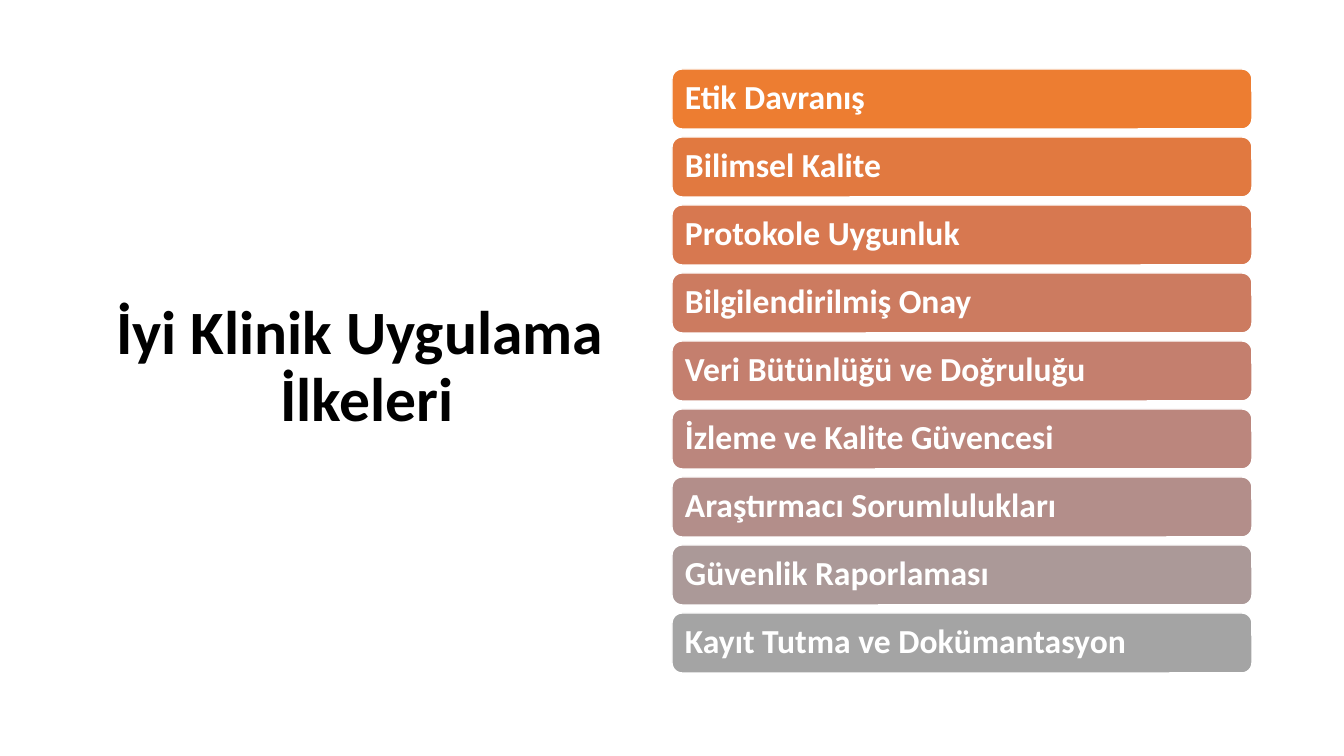
from pptx import Presentation
from pptx.dml.color import RGBColor
from pptx.enum.shapes import MSO_SHAPE
from pptx.enum.text import MSO_ANCHOR, PP_ALIGN
from pptx.util import Inches, Pt

PX_PER_INCH = 100.8
SLIDE_SIZE = (1344, 756)

TITLE = "İyi Klinik Uygulama\v İlkeleri"
PRINCIPLES = [
    ("Etik Davranış", "ED7D31"),
    ("Bilimsel Kalite", "E17940"),
    ("Protokole Uygunluk", "D77850"),
    ("Bilgilendirilmiş Onay", "CC7B60"),
    ("Veri Bütünlüğü ve Doğruluğu", "C47F6E"),
    ("İzleme ve Kalite Güvencesi", "BB867D"),
    ("Araştırmacı Sorumlulukları", "B38E8A"),
    ("Güvenlik Raporlaması", "AB9998"),
    ("Kayıt Tutma ve Dokümantasyon", "A4A4A4"),
]
BAR_LEFT, BAR_TOP, BAR_WIDTH, BAR_HEIGHT, BAR_PITCH = 672, 69, 580, 60, 68


def px(length):
    return Inches(length / PX_PER_INCH)


def color(value):
    return RGBColor.from_string(value)


class SlideBuilder:
    font_name = "Calibri"
    white = "FFFFFF"
    black = "000000"

    def __init__(self, slide):
        self.slide = slide

    def set_text(self, shape, text, size, text_color, align, margins):
        frame = shape.text_frame
        frame.text = text
        frame_format = {"word_wrap": True, "vertical_anchor": MSO_ANCHOR.MIDDLE}
        for side, margin in zip(("left", "top", "right", "bottom"), margins):
            frame_format[f"margin_{side}"] = px(margin)
        for name, value in frame_format.items():
            setattr(frame, name, value)
        paragraph = frame.paragraphs[0]
        for name, value in {"alignment": align, "line_spacing": 0.9}.items():
            setattr(paragraph, name, value)
        for run in paragraph.runs:
            font_format = {"name": self.font_name, "size": Pt(size), "bold": True}
            for name, value in font_format.items():
                setattr(run.font, name, value)
            run.font.color.rgb = color(text_color)

    def title(self, text, *box):
        shape = self.slide.shapes.add_textbox(*map(px, box))
        self.set_text(shape, text, 44, self.black, PP_ALIGN.CENTER, (10, 5, 10, 5))

    def bar(self, text, fill, *box):
        shape = self.slide.shapes.add_shape(MSO_SHAPE.ROUNDED_RECTANGLE, *map(px, box))
        shape.shadow.inherit = False
        shape.adjustments[0] = 0.17
        shape.fill.solid()
        shape.fill.fore_color.rgb = color(fill)
        shape.line.color.rgb = color(self.white)
        shape.line.width = Pt(1)
        self.set_text(shape, text, 24, self.white, PP_ALIGN.LEFT, (10, 10, 10, 10))


def main():
    presentation = Presentation()
    presentation.slide_width, presentation.slide_height = map(px, SLIDE_SIZE)
    builder = SlideBuilder(presentation.slides.add_slide(presentation.slide_layouts[6]))

    # Title on the left
    builder.title(TITLE, 66, 61, 588, 614)

    # Stack of principles on the right
    for index, (principle, fill) in enumerate(PRINCIPLES):
        top = BAR_TOP + index * BAR_PITCH
        builder.bar(principle, fill, BAR_LEFT, top, BAR_WIDTH, BAR_HEIGHT)

    presentation.save("out.pptx")


if __name__ == "__main__":
    main()
